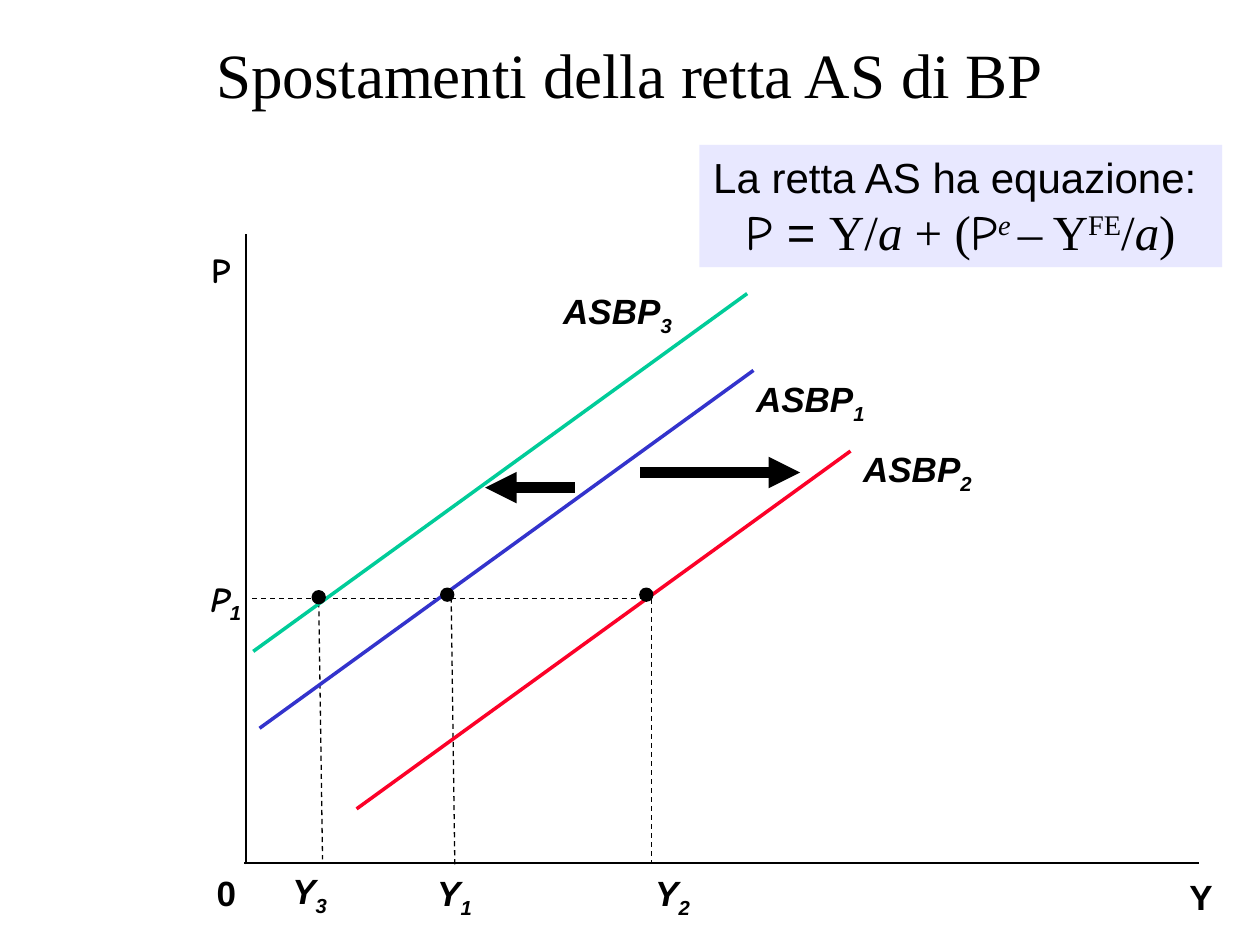
from lxml import etree
from pptx import Presentation
from pptx.dml.color import RGBColor
from pptx.enum.dml import MSO_LINE
from pptx.enum.shapes import MSO_CONNECTOR, MSO_SHAPE
from pptx.enum.text import MSO_ANCHOR, PP_ALIGN
from pptx.oxml.ns import qn
from pptx.util import Inches, Pt

LINE = MSO_CONNECTOR.STRAIGHT
OVAL = MSO_SHAPE.OVAL
DASH = MSO_LINE.DASH
LEFT, MID, RIGHT = PP_ALIGN.LEFT, PP_ALIGN.CENTER, PP_ALIGN.RIGHT

BLACK = RGBColor(0, 0, 0)
RED = RGBColor(0xFC, 0x01, 0x28)
BLUE = RGBColor(0x33, 0x33, 0xCC)
GREEN = RGBColor(0x00, 0xCC, 0x99)
LILAC = RGBColor(0xCC, 0xCC, 0xFF)
SANS, COMIC, SERIF = "Arial", "Comic Neue", "Times New Roman"

TITLE = "Spostamenti della retta AS di BP"
# Runs of the equation: text, font, italic, baseline shift in percent
INTRO = [("La retta AS ha equazione: ", SANS, False, 0)]
RULE = [
    ("P", COMIC, False, 0), (" = ", SANS, False, 0),
    ("Y/", SERIF, False, 0), ("a", SERIF, True, 0),
    (" + (", SERIF, False, 0), ("P", COMIC, False, 0),
    ("e ", SERIF, True, 30), ("– Y", SERIF, False, 0),
    ("FE", SERIF, False, 30), ("/", SERIF, False, 0),
    ("a", SERIF, True, 0), (")", SERIF, False, 0),
]
# Labels: text, subscript, font, left, top, width, align
LABELS = [
    ("P", "", COMIC, 1.02, 1.97, 0.81, RIGHT),
    ("P", "1", COMIC, 1.67, 4.58, 0.25, LEFT),
    ("0", "", SANS, 1.72, 6.92, 0.15, LEFT),
    ("Y", "", SANS, 9.44, 6.95, 0.19, LEFT),
    ("Y", "3", SANS, 2.32, 6.9, 0.39, LEFT),
    ("Y", "1", SANS, 3.47, 6.92, 0.42, LEFT),
    ("Y", "2", SANS, 5.2, 6.92, 0.51, LEFT),
    ("ASBP", "1", SANS, 6, 3, 0.89, LEFT),
    ("ASBP", "2", SANS, 6.85, 3.55, 0.87, LEFT),
    ("ASBP", "3", SANS, 4.47, 2.3, 0.9, LEFT),
]
AXES = [((1.94, 6.85), (9.52, 6.85)), ((1.95, 6.86), (1.95, 1.86))]
GUIDES = [
    ((2, 4.75), (5.17, 4.75)), ((2.53, 4.78), (2.56, 6.82)),
    ((3.58, 4.67), (3.61, 6.88)), ((5.17, 4.75), (5.17, 6.86)),
]
# Supply lines are parallel: start of each, common run and rise
SUPPLY = [(2.83, 6.42, RED), (2.06, 5.78, BLUE), (2.01, 5.17, GREEN)]
RUN, RISE = 3.92, 2.84
SHIFTS = [((5.08, 3.75), (6.35, 3.75)), ((4.56, 3.87), (3.85, 3.87))]
DOTS = [(2.48, 4.69), (3.5, 4.67), (5.08, 4.67)]
DOT = 0.1

prs = Presentation()
prs.slide_width, prs.slide_height = Inches(10), Inches(7.5)
slide = prs.slides.add_slide(prs.slide_layouts[5])
shapes = slide.shapes


def draw(start, end, color, width, dash=None, arrow=False):
    line = shapes.add_connector(LINE, *map(Inches, start + end))
    line.line.color.rgb = color
    line.line.width = Pt(width)
    if dash:
        line.line.dash_style = dash
    if arrow:
        etree.SubElement(line.line._get_or_add_ln(), qn("a:tailEnd"),
                         type="triangle")
    etree.SubElement(line._element.spPr, qn("a:effectLst"))


def write(para, runs, size, align, bold=False):
    para.alignment = align
    for text, name, slant, shift in runs:
        run = para.add_run()
        run.text = text
        font = run.font
        font.name, font.size = name, Pt(size)
        font.bold, font.italic = bold, slant
        font.color.rgb = BLACK
        if shift:
            run._r.get_or_add_rPr().set("baseline", str(shift * 1000))


def label(text, sub, name, left, top, width, align):
    box = shapes.add_textbox(*map(Inches, (left, top, width, 0.33)))
    frame = box.text_frame
    frame.margin_left = frame.margin_right = 0
    frame.margin_top = frame.margin_bottom = 0
    frame.word_wrap = align == RIGHT
    slant = bool(sub)
    runs = [(text, name, slant, 0)]
    if sub:
        runs.append((sub, SANS, slant, -25))
    write(frame.paragraphs[0], runs, 20, align, bold=True)


head = shapes.title
head.left, head.top, head.width, head.height = map(Inches, (0, 0.21, 10, 0.75))
head.text_frame.text = TITLE
head.text_frame.vertical_anchor = MSO_ANCHOR.MIDDLE
para = head.text_frame.paragraphs[0]
para.alignment = MID
font = para.runs[0].font
font.name, font.size, font.color.rgb = SERIF, Pt(36), BLACK

for start, end in GUIDES:
    draw(start, end, BLACK, 0.75, DASH)
for start, end in AXES:
    draw(start, end, BLACK, 1)
for x, y, color in SUPPLY:
    draw((x, y), (x + RUN, y - RISE), color, 2)
for start, end in SHIFTS:
    draw(start, end, BLACK, 6, arrow=True)

for x, y in DOTS:
    dot = shapes.add_shape(OVAL, *map(Inches, (x, y, DOT, DOT)))
    dot.shadow.inherit = False
    dot.fill.solid()
    dot.fill.fore_color.rgb = dot.line.color.rgb = BLACK
    dot.line.width = Pt(1)

for item in LABELS:
    label(*item)

note = shapes.add_textbox(*map(Inches, (5.55, 1.15, 4.15, 0.97)))
note.fill.solid()
note.fill.fore_color.rgb = LILAC
tint = note._element.spPr.find(".//" + qn("a:srgbClr"))
etree.SubElement(tint, qn("a:alpha"), val="44000")
frame = note.text_frame
frame.word_wrap = True
write(frame.paragraphs[0], INTRO, 24, MID)
write(frame.add_paragraph(), RULE, 28, MID)

prs.save("out.pptx")
